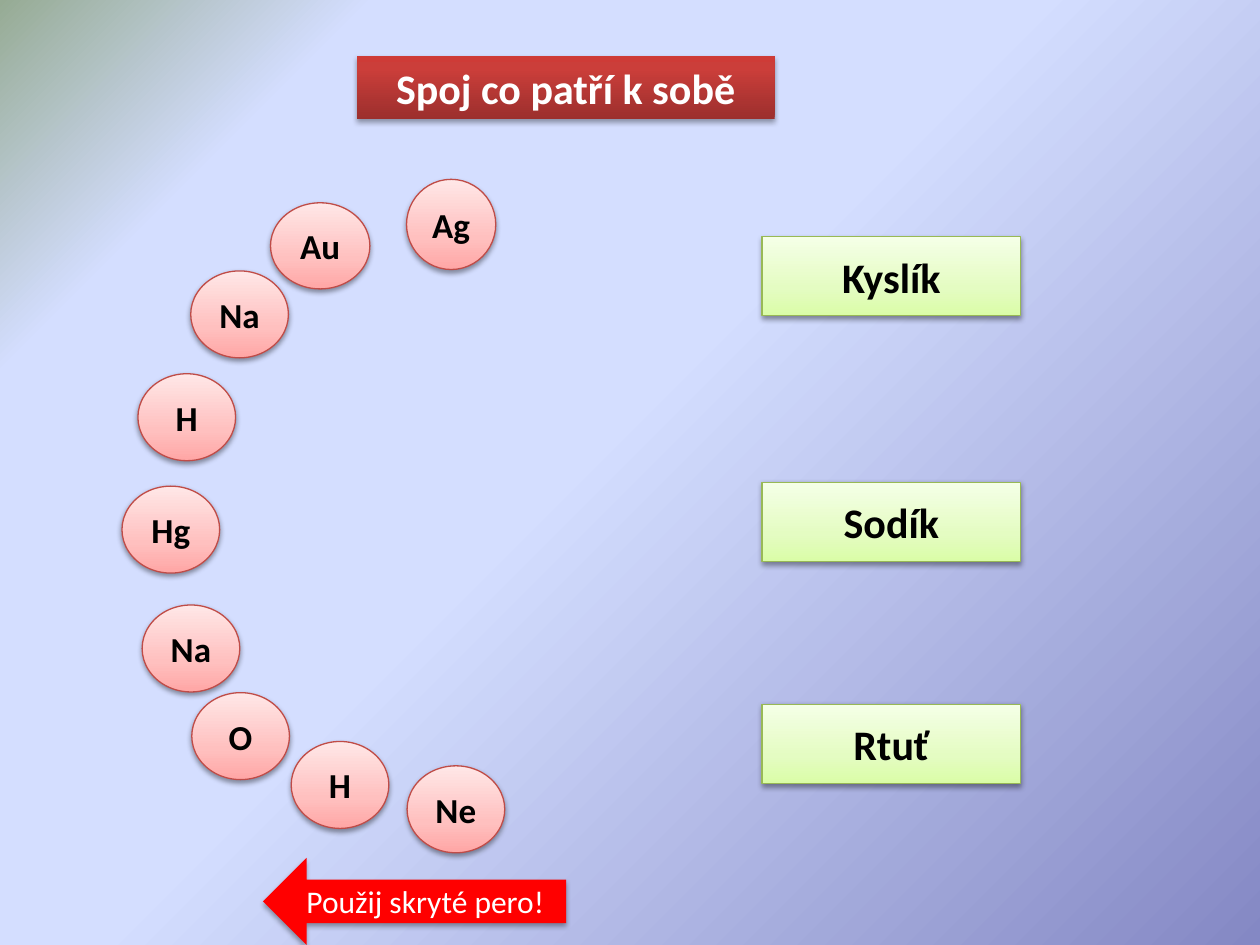
from dataclasses import dataclass
from typing import NamedTuple, Optional

from lxml.etree import SubElement as Sub
from pptx import Presentation
from pptx.dml.color import RGBColor as Rgb
from pptx.enum.shapes import MSO_SHAPE as Kind
from pptx.enum.text import MSO_ANCHOR as Anchor, MSO_AUTO_SIZE as Fit, PP_ALIGN as Align
from pptx.oxml.ns import qn
from pptx.util import Pt


class Look(NamedTuple):
    stops: tuple  # (percent, colour); a single stop is a plain fill
    ink: str
    size: int
    bold: bool
    line: Optional[str] = None
    shade: tuple = (35, 1.8)  # shadow opacity in percent, distance in points


@dataclass(frozen=True)
class Theme:
    font: str = "Calibri"
    back: tuple = ((0, "8488C4"), (53, "D4DEFF"), (83, "D4DEFF"), (100, "96AB94"))
    title: Look = Look(((0, "9C2F2D"), (80, "CB3E3A"), (100, "CE3B37")), "FFFFFF", 24, True)
    card: Look = Look(((0, "DAFDA7"), (35, "E4FCC2"), (100, "F5FFE7")),
                      "000000", 24, True, "98B955", (38, 1.6))
    ball: Look = Look(((0, "FFA6A5"), (35, "FFC0BF"), (100, "FFE7E7")),
                      "000000", 20, True, "BF4C48", (38, 1.6))
    arrow: Look = Look(((0, "FF0000"),), "FFFFFF", 18, False)


class Ball(NamedTuple):
    text: str
    left: float
    top: float
    width: float = 55.8
    height: float = 49.7


class Card(NamedTuple):
    text: str
    top: float


THEME = Theme()
BALLS = (
    Ball("Ag", 232.3, 102.5, 51, 51.5), Ball("Hg", 69.7, 277.8),
    Ball("Au", 154.6, 115.9, 56.8, 49.2), Ball("H", 78.8, 213.6),
    Ball("Ne", 232.6, 437.6), Ball("Na", 81.2, 345.7), Ball("O", 109.6, 395.8),
    Ball("Na", 109, 154.8), Ball("H", 166.4, 423.7),
)
CARDS = (Card("Kyslík", 135.2), Card("Sodík", 275.6), Card("Rtuť", 402.4))


def blend(host, stops: tuple, round_: bool = False) -> None:
    """Swap the plain fill inside host for a gradient."""
    plain = host.find(qn("a:solidFill"))
    grad = plain.makeelement(qn("a:gradFill"), {"rotWithShape": "1"})
    host.replace(plain, grad)
    items = Sub(grad, qn("a:gsLst"))
    for pos, tint in stops:
        stop = Sub(items, qn("a:gs"), pos=str(pos * 1000))
        Sub(stop, qn("a:srgbClr"), val=tint)
    if round_:
        path = Sub(grad, qn("a:path"), path="circle")
        Sub(path, qn("a:fillToRect"), l="100000", t="100000")
    else:
        Sub(grad, qn("a:lin"), ang=str(270 * 60000), scaled="0")


def cast(shape, alpha: int, dist: float) -> None:
    """Give the shape a soft shadow that falls straight down."""
    shape.shadow.inherit = False
    effect = shape.element.find(qn("p:spPr")).find(qn("a:effectLst"))
    outer = Sub(effect, qn("a:outerShdw"), blurRad=str(Pt(3.1)), dist=str(Pt(dist)),
                dir=str(90 * 60000), rotWithShape="0")
    tint = Sub(outer, qn("a:srgbClr"), val="000000")
    Sub(tint, qn("a:alpha"), val=str(alpha * 1000))


def paint(shape, text: str, look: Look, wrap: bool = True) -> None:
    """Set fill, line, shadow and text of one shape."""
    shape.fill.solid()
    shape.fill.fore_color.rgb = Rgb.from_string(look.stops[0][1])
    if len(look.stops) > 1:
        blend(shape.element.find(qn("p:spPr")), look.stops)
    if look.line:
        shape.line.color.rgb = Rgb.from_string(look.line)
        shape.line.width = Pt(0.75)
    else:
        shape.line.fill.background()
    cast(shape, *look.shade)

    frame = shape.text_frame
    frame.text = text
    frame.word_wrap = wrap
    frame.auto_size = Fit.NONE
    frame.vertical_anchor = Anchor.MIDDLE
    para = frame.paragraphs[0]
    para.alignment = Align.CENTER
    font = para.runs[0].font
    form = {"name": THEME.font, "size": Pt(look.size), "bold": look.bold}
    for key, val in form.items():
        setattr(font, key, val)
    font.color.rgb = Rgb.from_string(look.ink)


def place(shapes, kind: Kind, box: tuple, text: str, look: Look, wrap: bool = True) -> None:
    """Add one preset shape; box is left, top, width, height."""
    paint(shapes.add_shape(kind, *map(Pt, box)), text, look, wrap)


def main() -> None:
    deck = Presentation()
    deck.slide_width, deck.slide_height = Pt(720), Pt(540)
    slide = deck.slides.add_slide(deck.slide_layouts[5])

    # Background
    slide.background.fill.solid()
    blend(next(slide.element.iter(qn("p:bgPr"))), THEME.back, True)

    # Title, with a fixed height
    title = slide.shapes.title
    spot = {"left": 204, "top": 32, "width": 238.6, "height": 36}
    for key, val in spot.items():
        setattr(title, key, Pt(val))
    paint(title, "Spoj co patří k sobě", THEME.title)
    title.text_frame.vertical_anchor = Anchor.TOP

    # Element names
    for card in CARDS:
        box = (435.5, card.top, 147.8, 45.3)
        place(slide.shapes, Kind.RECTANGLE, box, card.text, THEME.card)

    # Hint
    place(slide.shapes, Kind.LEFT_ARROW, (150.3, 490.2, 173.2, 49.8),
          "Použij skryté pero!", THEME.arrow)

    # Arc of element symbols
    arc = slide.shapes.add_group_shape()
    for ball in BALLS:
        place(arc.shapes, Kind.OVAL, ball[1:], ball.text, THEME.ball, False)

    deck.save("out.pptx")


if __name__ == "__main__":
    main()
